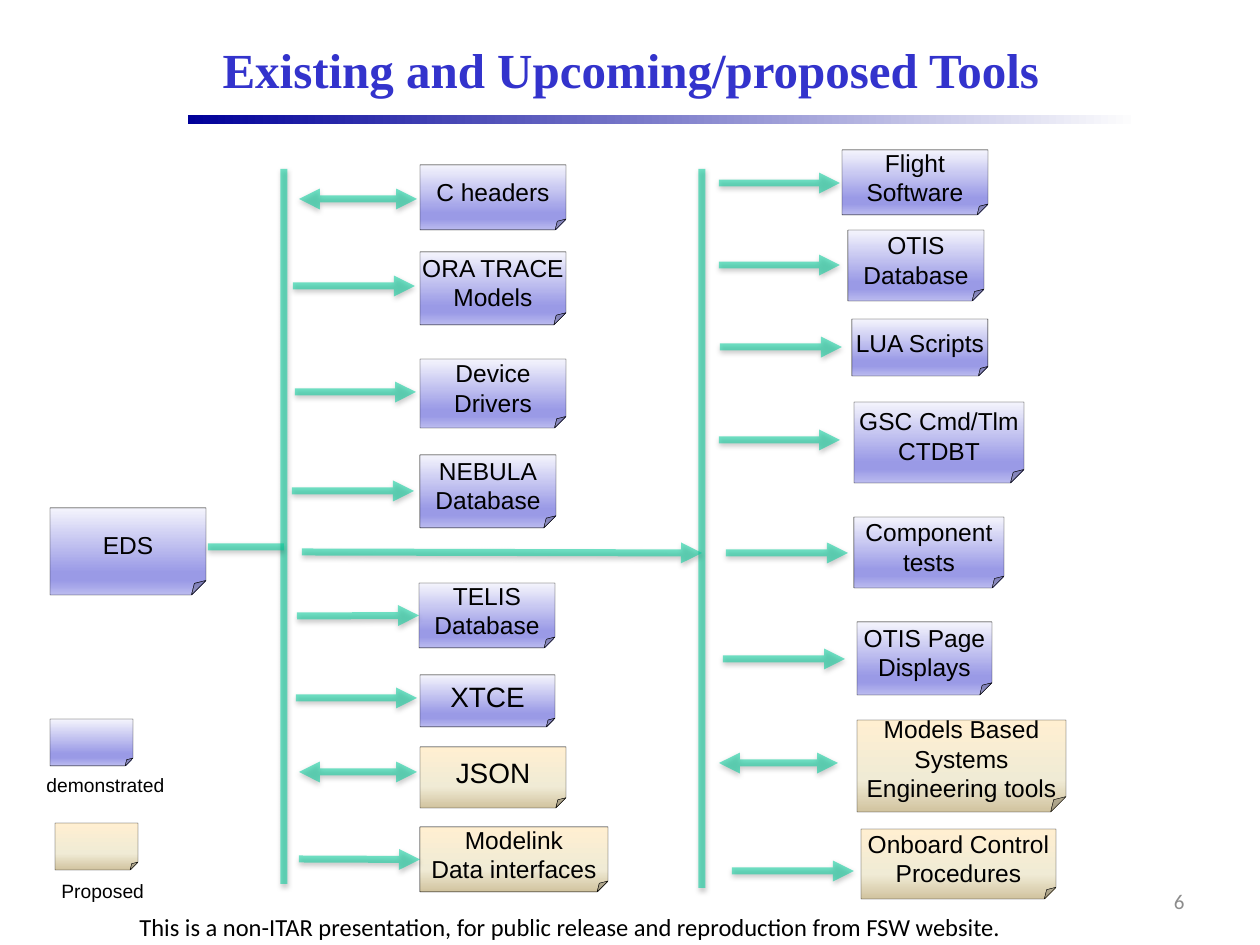
from dataclasses import dataclass

from lxml.etree import SubElement
from pptx import Presentation
from pptx.dml.color import RGBColor
from pptx.enum.shapes import MSO_CONNECTOR, MSO_SHAPE
from pptx.enum.text import MSO_ANCHOR, MSO_AUTO_SIZE, PP_ALIGN
from pptx.oxml.ns import qn
from pptx.util import Emu, Pt

PX_PER_INCH = 126


@dataclass(frozen=True)
class Theme:
    title: tuple = ("Times New Roman", 28, "3333CC", True)
    label: tuple = ("Arial", 14, "000000", False)
    large: tuple = ("Arial", 16, "000000", False)
    legend: tuple = ("Arial", 11, "000000", False)
    footer: tuple = ("Calibri", 14, "000000", False)
    number: tuple = ("Calibri", 12, "8C8C8C", False)
    rule: tuple = ((0, "000099"), (100, "FCFCFD"))
    demonstrated: tuple = ((0, "F4F4FC"), (74, "9A9AE6"), (83, "9A9AE6"), (100, "BBBBEF"))
    proposed: tuple = ((0, "FFEFD1"), (65, "F0EBD5"), (100, "D1C39F"))
    outline: str = "000000"
    flow: str = "00CC99"


THEME = Theme()
DONE, PLANNED = THEME.demonstrated, THEME.proposed

TOOLS = [
    ("C headers", (420, 165, 146, 65), (299, 417, 199), DONE, THEME.label, True),
    ("ORA TRACE\nModels", (420, 252, 146, 73), (293, 415, 286), DONE, THEME.label, False),
    ("Device Drivers", (420, 359, 146, 69), (295, 416, 392), DONE, THEME.label, False),
    ("NEBULA\nDatabase", (420, 455, 136, 73), (292, 414, 491), DONE, THEME.label, False),
    ("TELIS\nDatabase", (419, 583, 136, 65), (297, 419, 616), DONE, THEME.label, False),
    ("XTCE", (420, 675, 135, 52), (296, 417, 698), DONE, THEME.large, False),
    ("JSON", (420, 747, 146, 61), (299, 417, 772), PLANNED, THEME.large, True),
    ("Modelink\nData interfaces", (420, 827, 188, 65), (299, 420, 859), PLANNED, THEME.label, False),
    ("Flight\nSoftware", (842, 150, 146, 65), (719, 840, 183), DONE, THEME.label, False),
    ("OTIS\nDatabase", (848, 230, 136, 71), (719, 840, 265), DONE, THEME.label, False),
    ("LUA Scripts", (852, 319, 136, 57), (720, 842, 347), DONE, THEME.label, False),
    ("GSC Cmd/Tlm CTDBT", (854, 402, 170, 81), (719, 840, 440), DONE, THEME.label, False),
    ("Component\ntests", (854, 517, 150, 71), (726, 848, 553), DONE, THEME.label, False),
    ("OTIS Page Displays", (857, 622, 135, 73), (723, 845, 659), DONE, THEME.label, False),
    ("Models Based Systems Engineering tools", (857, 720, 209, 92), (719, 838, 763),
     PLANNED, THEME.label, True),
    ("Onboard Control Procedures", (861, 829, 195, 70), (732, 854, 871),
     PLANNED, THEME.label, False),
]

LEGEND = [
    ("demonstrated", (50, 719, 83, 47), (34, 767, 144, 37), DONE),
    ("Proposed", (55, 823, 83, 47), (49, 873, 108, 37), PLANNED),
]


def px(n):
    return Emu(round(n * 914400 / PX_PER_INCH))


def apply(obj, values):
    for name, value in values.items():
        setattr(obj, name, value)


def set_text(tf, text, style, align=PP_ALIGN.LEFT, **frame):
    apply(tf, {"word_wrap": True, "auto_size": MSO_AUTO_SIZE.NONE, **frame})
    font, size, color, bold = style
    tf.text = text
    for p in tf.paragraphs:
        p.alignment = align
        for r in p.runs:
            apply(r.font, {"name": font, "size": Pt(size), "bold": bold})
            r.font.color.rgb = RGBColor.from_string(color)


def add_text(s, box, text, style, **frame):
    sp = s.shapes.add_textbox(*map(px, box))
    set_text(sp.text_frame, text, style, **frame)


def add_gradient_shape(s, kind, box, stops, angle):
    sp = s.shapes.add_shape(kind, *map(px, box))
    sp.shadow.inherit = False
    sp.fill.gradient()
    sp.fill.gradient_angle = angle
    gs_list = sp._element.spPr.find(qn("a:gradFill")).find(qn("a:gsLst"))
    for gs in list(gs_list):
        gs_list.remove(gs)
    for pos, color in stops:
        gs = SubElement(gs_list, qn("a:gs"), pos=str(pos * 1000))
        SubElement(gs, qn("a:srgbClr"), val=color)
    return sp


def add_note(s, box, stops, text="", style=THEME.label):
    sp = add_gradient_shape(s, MSO_SHAPE.FOLDED_CORNER, box, stops, 270)
    sp.line.color.rgb = RGBColor.from_string(THEME.outline)
    sp.line.width = Pt(0.25)
    if text:
        set_text(sp.text_frame, text, style, PP_ALIGN.CENTER, margin_left=0,
                 margin_right=0, vertical_anchor=MSO_ANCHOR.MIDDLE)
    return sp


def add_flow(s, start, end, heads=()):
    cxn = s.shapes.add_connector(MSO_CONNECTOR.STRAIGHT, *map(px, (*start, *end)))
    cxn.line.width = Pt(4)
    cxn.line.color.rgb = RGBColor.from_string(THEME.flow)
    sp_pr = cxn._element.spPr
    ln = sp_pr.find(qn("a:ln"))
    SubElement(next(ln.iter(qn("a:srgbClr"))), qn("a:alpha"), val="55000")
    for head in heads:
        SubElement(ln, qn(f"a:{head}"), type="triangle")
    effects = SubElement(sp_pr, qn("a:effectLst"))
    shadow = SubElement(effects, qn("a:outerShdw"), blurRad=str(Pt(3.1)), dist=str(Pt(1.6)),
                        dir="5400000", rotWithShape="0")
    black = SubElement(shadow, qn("a:srgbClr"), val="000000")
    SubElement(black, qn("a:alpha"), val="38000")
    return cxn


def add_tool(s, text, box, arrow, stops, style, two_way):
    sp = add_note(s, box, stops, text, style)
    x1, x2, y = arrow
    heads = ("headEnd", "tailEnd") if two_way else ("tailEnd",)
    cxn = add_flow(s, (x1, y), (x2, y), heads)
    left, top, _, height = box
    if x2 == left and abs(y - top - height / 2) < 1:
        cxn.end_connect(sp, 1)


def add_title(s):
    title = s.shapes.title
    apply(title, dict(zip(("left", "top", "width", "height"), map(px, (210, 21, 921, 95)))))
    set_text(title.text_frame, "Existing and Upcoming/proposed Tools", THEME.title,
             vertical_anchor=MSO_ANCHOR.MIDDLE)
    rule = add_gradient_shape(s, MSO_SHAPE.RECTANGLE, (188, 115, 943, 9), THEME.rule, 0)
    rule.line.fill.background()


def main():
    prs = Presentation()
    apply(prs, {"slide_width": px(1260), "slide_height": px(945)})
    s = prs.slides.add_slide(prs.slide_layouts[5])
    add_title(s)
    add_note(s, (50, 508, 156, 87), DONE, "EDS")
    for x, bottom in ((284, 884), (702, 888)):
        add_flow(s, (x, 169), (x, bottom))
    add_flow(s, (208, 547), (284, 547))
    add_flow(s, (302, 552), (702, 553), ("tailEnd",))
    for tool in TOOLS:
        add_tool(s, *tool)
    for text, box, caption, stops in LEGEND:
        add_note(s, box, stops)
        add_text(s, caption, text, THEME.legend, word_wrap=False)
    add_text(s, (127, 906, 1034, 34),
             "This is a non-ITAR presentation, for public release and reproduction from FSW website.",
             THEME.footer)
    add_text(s, (1130, 876, 67, 50), "6", THEME.number, align=PP_ALIGN.RIGHT,
             vertical_anchor=MSO_ANCHOR.MIDDLE)
    prs.save("out.pptx")


if __name__ == "__main__":
    main()
